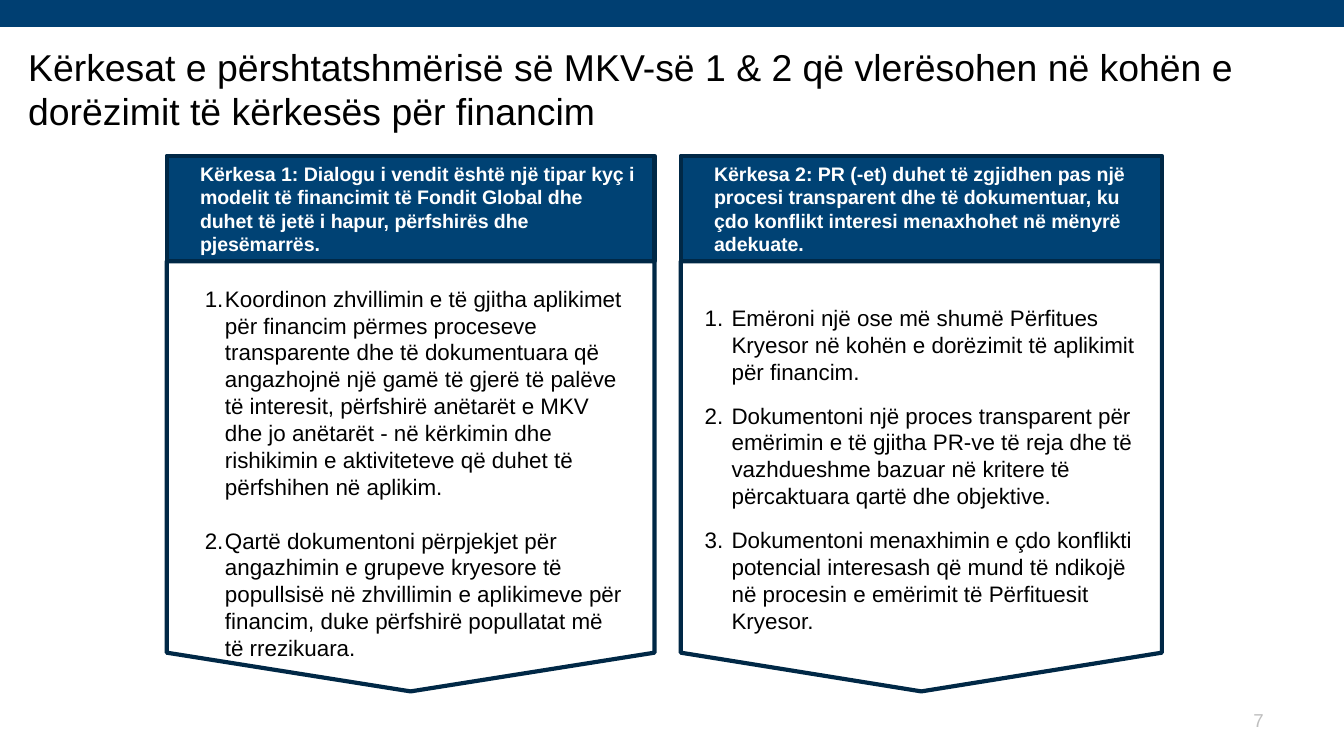
from pptx import Presentation
from pptx.dml.color import RGBColor
from pptx.enum.shapes import MSO_SHAPE as SHAPE
from pptx.enum.text import MSO_ANCHOR as ANCHOR, PP_ALIGN as ALIGN
from pptx.oxml.ns import qn
from pptx.util import Emu, Pt
from lxml.etree import SubElement

SCALE = 4572  # EMU per px, 200 px to the inch
SLIDE_W, SLIDE_H = 2000, 1125
COLORS = {
    "band": "003F72", "header": "004274", "outline": "002846",
    "white": "FFFFFF", "text": "000000", "number": "BFBFBF",
}
HEADER_H, ARROW_H = 157, 640

COLUMNS = [
    dict(
        box=(248, 232, 726), list_box=(23, 182, 682, 580),
        heading="Kërkesa 1: Dialogu i vendit është një tipar kyç i modelit të "
                "financimit të Fondit Global dhe duhet të jetë i hapur, "
                "përfshirës dhe pjesëmarrës.",
        items=[
            "Koordinon zhvillimin e të gjitha aplikimet për financim përmes "
            "proceseve transparente dhe të dokumentuara që angazhojnë një gamë "
            "të gjerë të palëve të interesit, përfshirë anëtarët e MKV dhe jo "
            "anëtarët - në kërkimin dhe rishikimin e aktiviteteve që duhet të "
            "përfshihen në aplikim.",
            "Qartë dokumentoni përpjekjet për angazhimin e grupeve kryesore të "
            "popullsisë në zhvillimin e aplikimeve për financim, duke përfshirë "
            "popullatat më të rrezikuara.",
        ],
        list_format=dict(indent=44, hanging=30, gap=14.4),
    ),
    dict(
        box=(1013, 232, 716), list_box=(0, 211, 698, 520),
        heading="Kërkesa 2: PR (-et) duhet të zgjidhen pas një procesi "
                "transparent dhe të dokumentuar, ku çdo konflikt interesi "
                "menaxhohet në mënyrë adekuate.",
        items=[
            "Emëroni një ose më shumë Përfitues Kryesor në kohën e dorëzimit të "
            "aplikimit për financim.",
            "Dokumentoni një proces transparent për emërimin e të gjitha PR-ve "
            "të reja dhe të vazhdueshme bazuar në kritere të përcaktuara qartë "
            "dhe objektive.",
            "Dokumentoni menaxhimin e çdo konflikti potencial interesash që "
            "mund të ndikojë në procesin e emërimit të Përfituesit Kryesor.",
        ],
        list_format=dict(indent=56, hanging=40, gap=9),
    ),
]


def px(n):
    return Emu(round(n * SCALE))


def rgb(name):
    return RGBColor.from_string(COLORS[name])


def write(sp, paragraphs, size=12, color="text", bold=False, align=ALIGN.LEFT,
          anchor=ANCHOR.TOP, indent=0, hanging=0, gap=0, numbered=False):
    """Fill a shape with paragraphs; gap is the space in points between them."""
    tf = sp.text_frame
    tf.word_wrap = True
    tf.vertical_anchor = anchor
    for i, text in enumerate(paragraphs):
        p = tf.paragraphs[0] if i == 0 else tf.add_paragraph()
        p.alignment = align
        if i:
            p.space_before = Pt(gap)
        pPr = p._p.get_or_add_pPr()
        pPr.set("marL", str(px(indent)))
        pPr.set("indent", str(px(-hanging)))
        if numbered:
            SubElement(pPr, qn("a:buFont"), typeface="+mj-lt")
            SubElement(pPr, qn("a:buAutoNum"), type="arabicPeriod")
        r = p.add_run()
        r.text = text
        r.font.name = "Arial"
        r.font.size = Pt(size)
        r.font.bold = bold
        r.font.color.rgb = rgb(color)


def add_box(s, kind, x, y, w, h, fill, line=None):
    sp = s.shapes.add_shape(kind, px(x), px(y), px(w), px(h))
    sp.shadow.inherit = False
    sp.fill.solid()
    sp.fill.fore_color.rgb = rgb(fill)
    if line:
        sp.line.color.rgb = rgb(line)
        sp.line.width = Pt(2.25)
    else:
        sp.line.fill.background()
    return sp


def add_text(s, x, y, w, h, paragraphs, **fmt):
    sp = s.shapes.add_textbox(px(x), px(y), px(w), px(h))
    write(sp, paragraphs, **fmt)
    return sp


def add_title(s, x, y, w, h, text):
    sp = add_text(s, x, y, w, h, [text], size=20)
    tf = sp.text_frame
    tf.margin_left = tf.margin_top = tf.margin_right = 0


def add_column(s, box, heading, items, list_box, list_format):
    """Draw a heading over a downward arrow panel with a numbered list."""
    x, y, w = box
    header = add_box(s, SHAPE.RECTANGLE, x, y, w, HEADER_H, "header", "outline")
    write(header, [heading], size=10.5, color="white", bold=True,
          anchor=ANCHOR.MIDDLE, indent=30)

    # The pentagon is turned a quarter, so its width and height swap.
    turn = (w - ARROW_H) / 2
    panel = add_box(s, SHAPE.PENTAGON, x + turn, y + HEADER_H - turn,
                    ARROW_H, w, "white", "outline")
    panel.rotation = 90
    panel.adjustments[0] = 0.09

    dx, dy, list_w, list_h = list_box
    add_text(s, x + dx, y + dy, list_w, list_h, items, numbered=True,
             **list_format)


def main():
    prs = Presentation()
    prs.slide_width, prs.slide_height = px(SLIDE_W), px(SLIDE_H)
    s = prs.slides.add_slide(prs.slide_layouts[6])

    add_box(s, SHAPE.RECTANGLE, 0, 0, SLIDE_W, 40, "band")
    add_title(s, 42, 65, 1940, 184,
              "Kërkesat e përshtatshmërisë së MKV-së 1 & 2 që vlerësohen në "
              "kohën e dorëzimit të kërkesës për financim")
    for column in COLUMNS:
        add_column(s, **column)
    add_text(s, 1434, 1042, 466, 60, ["7"], size=10, color="number",
             align=ALIGN.RIGHT, anchor=ANCHOR.MIDDLE)
    prs.save("out.pptx")


if __name__ == "__main__":
    main()
